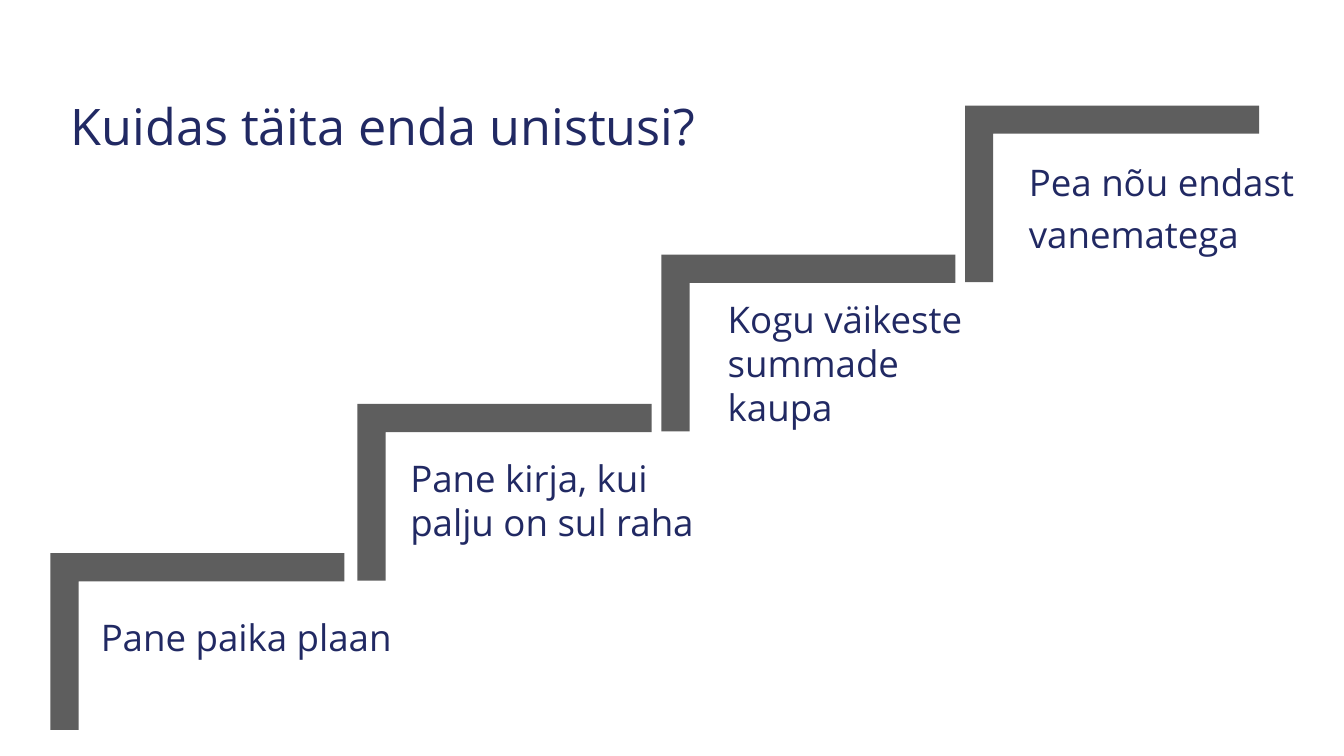
from dataclasses import dataclass

from pptx import Presentation
from pptx import util as u
from pptx.dml.color import RGBColor
from pptx.enum import text


@dataclass(frozen=True)
class Theme:
    """Colours, font and type sizes of the slide."""
    navy: RGBColor = RGBColor(0x21, 0x29, 0x63)
    grey: RGBColor = RGBColor(0x5E, 0x5E, 0x5E)
    font: str = "Open Sans"
    title_size: float = 36
    label_size: float = 26.2


@dataclass(frozen=True)
class Step:
    """One stair: its left edge, and its label's offset, size and line spacing in cm."""
    label: str
    left: float
    label_box: tuple
    line_spacing: float = 1.0


THEME = Theme()
TITLE_BOX = (1.78, 2.57, 28.12, 3.53)
STEP_WIDTH, STEP_HEIGHT, STEP_THICKNESS = 7.41, 4.45, 0.71
FIRST_STEP_TOP, STEP_RISE = 13.94, 3.76
LABEL_INSET = 0.1
STEPS = [
    Step("Pane paika plaan", 1.27, (1.17, 1.15, 9.96, 1.68), 1.2),
    Step("Pane kirja, kui palju on sul raha", 9.01, (1.23, 1.0, 7.72, 2.82)),
    Step("Kogu väikeste summade kaupa", 16.67, (1.57, 1.15, 6.2, 3.15)),
    Step("Pea nõu endast vanematega", 24.32, (1.51, 0.54, 8.03, 3.86), 1.2),
]


def write_text(frame, content, size, inset, anchor, line_spacing):
    """Fill a text frame with one left-aligned paragraph in the theme's style."""
    frame.word_wrap = True
    frame.auto_size = text.MSO_AUTO_SIZE.NONE
    frame.vertical_anchor = anchor
    frame.margin_left = frame.margin_right = u.Cm(inset)
    frame.margin_top = frame.margin_bottom = u.Cm(inset)
    paragraph = frame.paragraphs[0]
    paragraph.text = content
    paragraph.alignment = text.PP_ALIGN.LEFT
    paragraph.line_spacing = line_spacing
    paragraph.font.name = THEME.font
    paragraph.font.size = u.Pt(size)
    paragraph.font.color.rgb = THEME.navy


def place_title(slide, box):
    """Move and format the title placeholder."""
    title = slide.shapes.title
    title.left, title.top, title.width, title.height = map(u.Cm, box)
    write_text(title.text_frame, "Kuidas täita enda unistusi?", THEME.title_size,
               0, text.MSO_ANCHOR.TOP, 0.9)


def add_stair(slide, left, top, width, height):
    """Draw a corner-shaped stair in the given box."""
    inner_left, inner_top = left + STEP_THICKNESS, top + STEP_THICKNESS
    right, bottom = left + width, top + height
    corners = [(right, top), (right, inner_top), (inner_left, inner_top),
               (inner_left, bottom), (left, bottom), (left, top)]
    points = [(u.Cm(x), u.Cm(y)) for x, y in corners]
    builder = slide.shapes.build_freeform(*points[0])
    builder.add_line_segments(points[1:], close=True)
    stair = builder.convert_to_shape()
    stair.shadow.inherit = False
    stair.fill.solid()
    stair.fill.fore_color.rgb = THEME.grey
    stair.line.fill.background()


def add_label(slide, step, top):
    """Place a step's label relative to the stair's top left corner."""
    offset_x, offset_y, width, height = step.label_box
    box = (step.left + offset_x, top + offset_y, width, height)
    label = slide.shapes.add_textbox(*map(u.Cm, box))
    write_text(label.text_frame, step.label, THEME.label_size, LABEL_INSET,
               text.MSO_ANCHOR.MIDDLE, step.line_spacing)


def add_staircase(slide, top):
    """Build the staircase upwards from the top of its first stair."""
    for index, step in enumerate(STEPS):
        step_top = top - index * STEP_RISE
        add_stair(slide, step.left, step_top, STEP_WIDTH, STEP_HEIGHT)
        add_label(slide, step, step_top)


def main():
    """Build and save the presentation."""
    presentation = Presentation()
    presentation.slide_width = u.Cm(33.87)
    presentation.slide_height = u.Cm(19.05)
    slide = presentation.slides.add_slide(presentation.slide_layouts[5])
    place_title(slide, TITLE_BOX)
    add_staircase(slide, FIRST_STEP_TOP)
    presentation.save("out.pptx")


if __name__ == "__main__":
    main()
